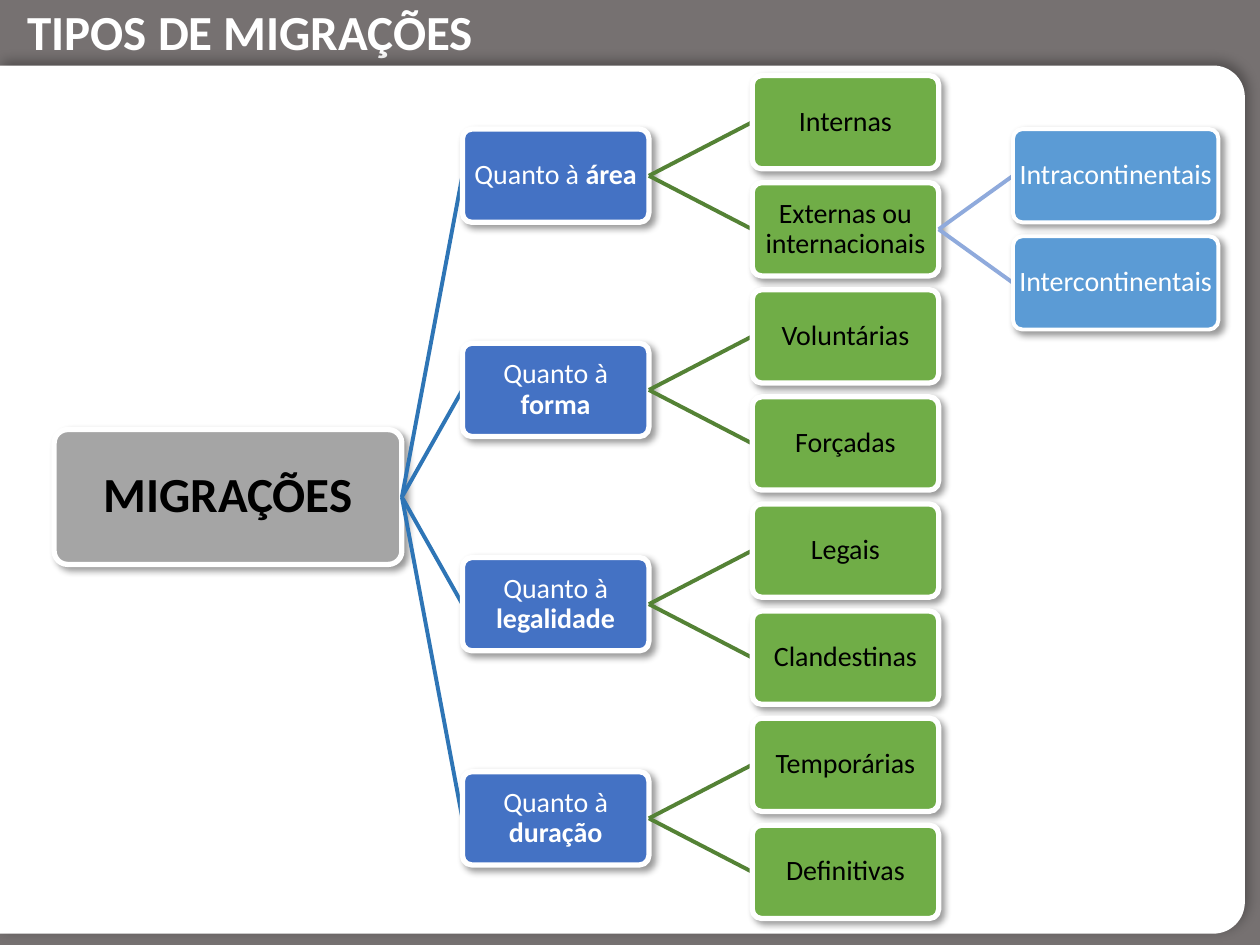
from math import cos, pi, sin

from lxml import etree
from pptx import Presentation
from pptx.dml.color import RGBColor
from pptx.enum.shapes import MSO_CONNECTOR, MSO_SHAPE
from pptx.enum.text import MSO_ANCHOR, PP_ALIGN
from pptx.oxml.ns import qn
from pptx.util import Inches, Pt

RECT, ROUNDED = MSO_SHAPE.RECTANGLE, MSO_SHAPE.ROUNDED_RECTANGLE
STRAIGHT = MSO_CONNECTOR.STRAIGHT
MIDDLE, CENTER = MSO_ANCHOR.MIDDLE, PP_ALIGN.CENTER

WIDTH, HEIGHT = 10, 7.5
FIRST_ROW, ROW_PITCH = 0.97, 0.85
FONT = "Calibri"
COLORS = {
    "frame": "767171", "white": "FFFFFF", "black": "000000",
    "root": "A5A5A5", "criterion": "4472C4", "kind": "70AD47", "scope": "5B9BD5",
    "root_link": "2E75B6", "criterion_link": "548235", "kind_link": "8FAADC",
}
LEVELS = [
    {"left": 0.43, "size": (2.76, 1.07), "fill": "root", "text": "black",
     "font": 28, "border": 3, "link": "root_link", "child_gap": 2},
    {"left": 3.67, "size": (1.48, 0.74), "fill": "criterion", "text": "white",
     "font": 16, "border": 3, "link": "criterion_link", "child_gap": 1},
    {"left": 5.97, "size": (1.48, 0.74), "fill": "kind", "text": "black",
     "font": 16, "border": 3, "link": "kind_link", "child_gap": 1},
    {"left": 8.04, "size": (1.63, 0.74), "fill": "scope", "text": "white",
     "font": 16, "border": 2.25},
]
TREE = ("", "MIGRAÇÕES", [
    ("Quanto à ", "área", [
        ("Internas", "", []),
        ("Externas ou internacionais", "", [
            ("Intracontinentais", "", []),
            ("Intercontinentais", "", []),
        ]),
    ]),
    ("Quanto à ", "forma", [("Voluntárias", "", []), ("Forçadas", "", [])]),
    ("Quanto à ", "legalidade", [("Legais", "", []), ("Clandestinas", "", [])]),
    ("Quanto à ", "duração", [("Temporárias", "", []), ("Definitivas", "", [])]),
])


def row_center(row):
    return FIRST_ROW + row * ROW_PITCH


class Deck:
    def __init__(self, prs):
        self.s = prs.slides.add_slide(prs.slide_layouts[6])

    def color(self, name):
        return RGBColor.from_string(COLORS[name])

    def fill(self, sp, name):
        sp.shadow.inherit = False
        sp.fill.solid()
        sp.fill.fore_color.rgb = self.color(name)
        sp.line.fill.background()

    def shadow(self, sp, alpha, blur, angle):
        effects = sp._element.spPr.find(qn("a:effectLst"))
        outer = etree.SubElement(
            effects, qn("a:outerShdw"), blurRad=str(Pt(blur)), dist=str(Pt(3)),
            dir=str(angle * 60000), algn="ctr", rotWithShape="0")
        rgb = etree.SubElement(outer, qn("a:srgbClr"), val=COLORS["black"])
        etree.SubElement(rgb, qn("a:alpha"), val=str(alpha * 1000))

    def run(self, p, text, size, color, bold):
        r = p.add_run()
        r.text = text
        r.font.name, r.font.size, r.font.bold = FONT, Pt(size), bold
        r.font.color.rgb = self.color(color)

    def frame(self):
        sp = self.s.shapes.add_shape(RECT, 0, 0, Inches(WIDTH), Inches(HEIGHT))
        self.fill(sp, "frame")

    def title(self, text):
        sp = self.s.shapes.add_textbox(
            Inches(0.12), Inches(-0.04), Inches(9.37), Inches(0.57))
        sp.text_frame.word_wrap = True
        self.run(sp.text_frame.paragraphs[0], text, 28, "white", True)

    def panel(self, top=0.52, right=9.88, bottom=7.41, radius=0.25, steps=16):
        points = [(0, top)]
        for cy, start in ((top + radius, -pi / 2), (bottom - radius, 0)):
            for i in range(steps + 1):
                angle = start + i * pi / 2 / steps
                points.append((right - radius + radius * cos(angle),
                               cy + radius * sin(angle)))
        points.append((0, bottom))
        builder = self.s.shapes.build_freeform(0, Inches(bottom), scale=1)
        builder.add_line_segments([(Inches(x), Inches(y)) for x, y in points])
        sp = builder.convert_to_shape()
        self.fill(sp, "white")
        self.shadow(sp, 30, 7, 315)

    def box(self, level, row, plain, strong):
        width, height = level["size"]
        sp = self.s.shapes.add_shape(
            ROUNDED, Inches(level["left"]), Inches(row_center(row) - height / 2),
            Inches(width), Inches(height))
        sp.adjustments[0] = 0.1
        self.fill(sp, level["fill"])
        sp.line.color.rgb = self.color("white")
        sp.line.width = Pt(level["border"])
        self.shadow(sp, 40, 4, 45)
        tf = sp.text_frame
        tf.word_wrap, tf.vertical_anchor = True, MIDDLE
        tf.margin_left = tf.margin_right = Inches(0.01)
        tf.margin_top = tf.margin_bottom = Inches(0.01)
        p = tf.paragraphs[0]
        p.alignment, p.line_spacing = CENTER, 0.9
        for text, bold in ((plain, False), (strong, True)):
            if text:
                self.run(p, text, level["font"], level["text"], bold)

    def link(self, parent, row, child, child_row):
        line = self.s.shapes.add_connector(
            STRAIGHT, Inches(parent["left"] + parent["size"][0]),
            Inches(row_center(row)), Inches(child["left"]),
            Inches(row_center(child_row)))
        line.line.color.rgb = self.color(parent["link"])
        line.line.width = Pt(2.25)
        etree.SubElement(line._element.spPr, qn("a:effectLst"))

    def branch(self, node, row, depth=0):
        plain, strong, children = node
        level = LEVELS[depth]
        self.box(level, row, plain, strong)
        for i, child in enumerate(children):
            child_row = row + (i - (len(children) - 1) / 2) * level["child_gap"]
            self.link(level, row, LEVELS[depth + 1], child_row)
            self.branch(child, child_row, depth + 1)


def main():
    prs = Presentation()
    prs.slide_width, prs.slide_height = Inches(WIDTH), Inches(HEIGHT)
    deck = Deck(prs)
    deck.frame()
    deck.title("TIPOS DE MIGRAÇÕES")
    deck.panel()
    deck.branch(TREE, 3.5)
    prs.save("out.pptx")


if __name__ == "__main__":
    main()
